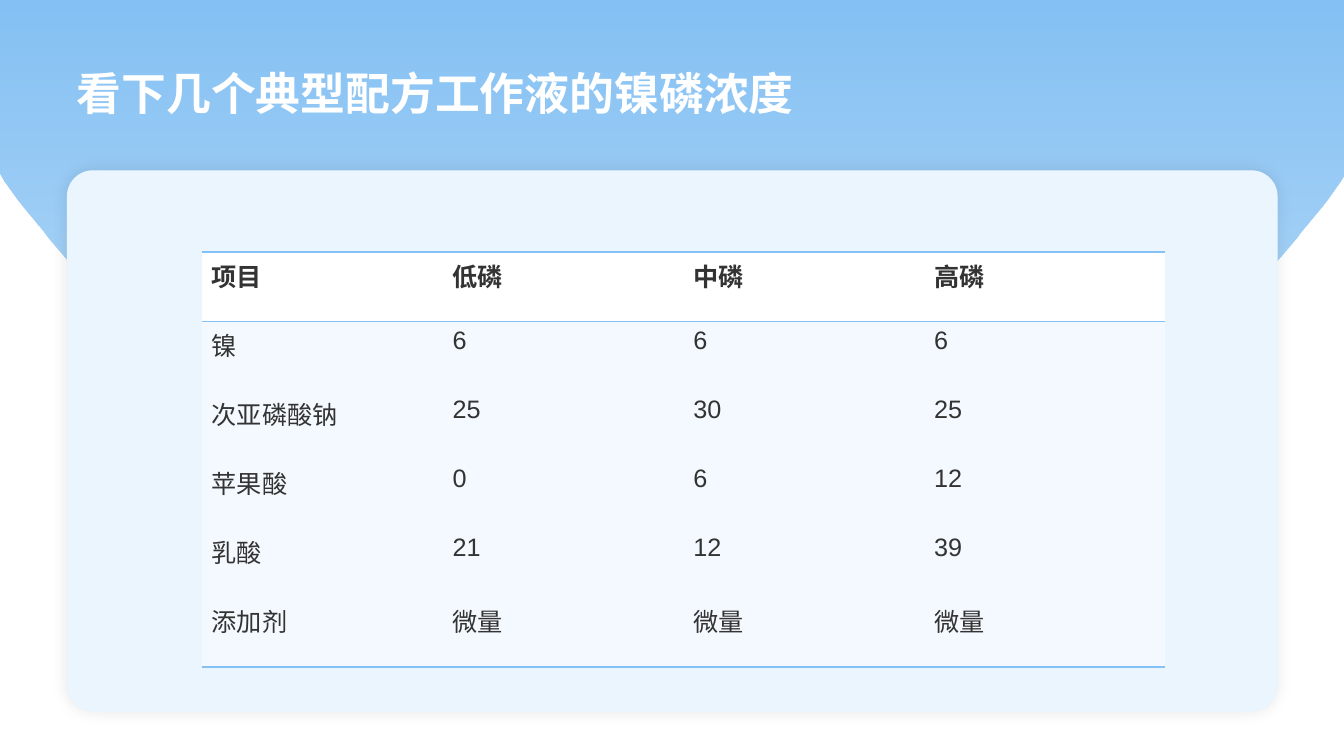
from dataclasses import dataclass

from lxml.etree import SubElement
from pptx import Presentation
from pptx.dml.color import RGBColor
from pptx.enum.shapes import MSO_SHAPE as SHAPE
from pptx.enum.text import MSO_ANCHOR as ANCHOR
from pptx.oxml.ns import qn
from pptx.util import Pt

WIDTH, HEIGHT = 960, 540
NO_STYLE = "{2D5ABB26-0587-4C30-8999-92F81FD0307C}"

TITLE = "看下几个典型配方工作液的镍磷浓度"
FORMULAS = [
    ("项目", "低磷", "中磷", "高磷"),
    ("镍", "6", "6", "6"),
    ("次亚磷酸钠", "25", "30", "25"),
    ("苹果酸", "0", "6", "12"),
    ("乳酸", "21", "12", "39"),
    ("添加剂", "微量", "微量", "微量"),
]


@dataclass(frozen=True)
class Theme:
    font: str = "Arial"
    title_size: int = 32
    body_size: int = 18
    blue: str = "84C1F4"
    panel: str = "E7F3FD"
    row: str = "F3F9FE"
    white: str = "FFFFFF"
    text: str = "333333"
    shadow: str = "000000"
    thick: float = 1.5
    thin: float = 0.75


def rgb(color):
    return RGBColor.from_string(color)


def set_alpha(fill, percent):
    """Make the first colour found in a fill element translucent."""
    color = next(fill.iter(qn("a:srgbClr")))
    SubElement(color, qn("a:alpha"), val=str(percent * 1000))


def bezier(p0, p1, p2, p3, steps=32):
    """Points along a cubic curve, both ends included."""
    points = []
    for i in range(steps + 1):
        t = i / steps
        u = 1 - t
        weights = (u ** 3, 3 * u * u * t, 3 * u * t * t, t ** 3)
        points.append(tuple(sum(w * p[axis] for w, p in zip(weights, (p0, p1, p2, p3)))
                            for axis in (0, 1)))
    return points


class SlideBuilder:
    def __init__(self, prs, theme):
        self.theme = theme
        self.s = prs.slides.add_slide(prs.slide_layouts[6])

    def style(self, p, size, color, bold=False):
        p.font.name = self.theme.font
        p.font.size = Pt(size)
        p.font.bold = bold
        p.font.color.rgb = rgb(color)

    def backdrop(self):
        """Blue header with a curved lower edge that fades downwards."""
        right = bezier((957, 129.6), (851, 280.8), (677.5, 379.4), (WIDTH / 2, 379.4))
        left = [(WIDTH - x, y) for x, y in reversed(right[:-1])]
        outline = [(WIDTH, 0), (WIDTH, 124.6), *right, *left, (0, 124.6)]
        builder = self.s.shapes.build_freeform(0, 0, scale=Pt(1))
        builder.add_line_segments(outline, close=True)
        sp = builder.convert_to_shape()
        sp.shadow.inherit = False
        sp.line.fill.background()
        sp.fill.gradient()
        sp.fill.gradient_angle = 90
        for stop in sp.fill.gradient_stops:
            stop.color.rgb = rgb(self.theme.blue)
        set_alpha(sp._element.spPr.find(qn("a:gradFill")), 50)

    def panel(self, x, y, w, h, color, alpha=None, shadow=False):
        sp = self.s.shapes.add_shape(SHAPE.ROUNDED_RECTANGLE, Pt(x), Pt(y), Pt(w), Pt(h))
        sp.adjustments[0] = 0.048
        sp.shadow.inherit = False
        sp.line.fill.background()
        sp.fill.solid()
        sp.fill.fore_color.rgb = rgb(color)
        props = sp._element.spPr
        if alpha is not None:
            set_alpha(props.find(qn("a:solidFill")), alpha)
        if shadow:
            outer = SubElement(props.find(qn("a:effectLst")), qn("a:outerShdw"),
                               blurRad=str(Pt(12)), dist="0", dir="0", algn="ctr")
            SubElement(outer, qn("a:srgbClr"), val=self.theme.shadow)
            set_alpha(outer, 10)

    def title(self, text, x, y, w, h):
        tf = self.s.shapes.add_textbox(Pt(x), Pt(y), Pt(w), Pt(h)).text_frame
        tf.margin_left = tf.margin_right = tf.margin_top = tf.margin_bottom = 0
        tf.word_wrap = True
        tf.vertical_anchor = ANCHOR.BOTTOM
        p = tf.paragraphs[0]
        p.text = text
        self.style(p, self.theme.title_size, self.theme.white, bold=True)

    def border(self, cell, side, width):
        line = SubElement(cell._tc.get_or_add_tcPr(), qn(f"a:{side}"), w=str(Pt(width)))
        fill = SubElement(line, qn("a:solidFill"))
        SubElement(fill, qn("a:srgbClr"), val=self.theme.blue)

    def table(self, rows, x, y, w, h):
        theme = self.theme
        frame = self.s.shapes.add_table(len(rows), len(rows[0]), Pt(x), Pt(y), Pt(w), Pt(h))
        table = frame.table
        table.horz_banding = False
        table._tbl.tblPr.find(qn("a:tableStyleId")).text = NO_STYLE
        for i, values in enumerate(rows):
            header = i == 0
            for j, value in enumerate(values):
                cell = table.cell(i, j)
                if header:
                    self.border(cell, "lnT", theme.thick)
                    self.border(cell, "lnB", theme.thin)
                elif i == len(rows) - 1:
                    self.border(cell, "lnB", theme.thick)
                cell.fill.solid()
                cell.fill.fore_color.rgb = rgb(theme.white if header else theme.row)
                p = cell.text_frame.paragraphs[0]
                p.text = value
                self.style(p, theme.body_size, theme.text, bold=header)


def main():
    prs = Presentation()
    prs.slide_width, prs.slide_height = Pt(WIDTH), Pt(HEIGHT)
    theme = Theme()
    slide = SlideBuilder(prs, theme)
    slide.backdrop()
    panel = (47.8, 121.7, 864.8, 386.6)
    slide.panel(*panel, theme.panel, shadow=True)
    slide.panel(*panel, theme.white, alpha=20)
    slide.title(TITLE, 54.7, 28.1, 850.3, 56.9)
    slide.table(FORMULAS, 144, 180, 688.2, 296.4)
    prs.save("out.pptx")


if __name__ == "__main__":
    main()
